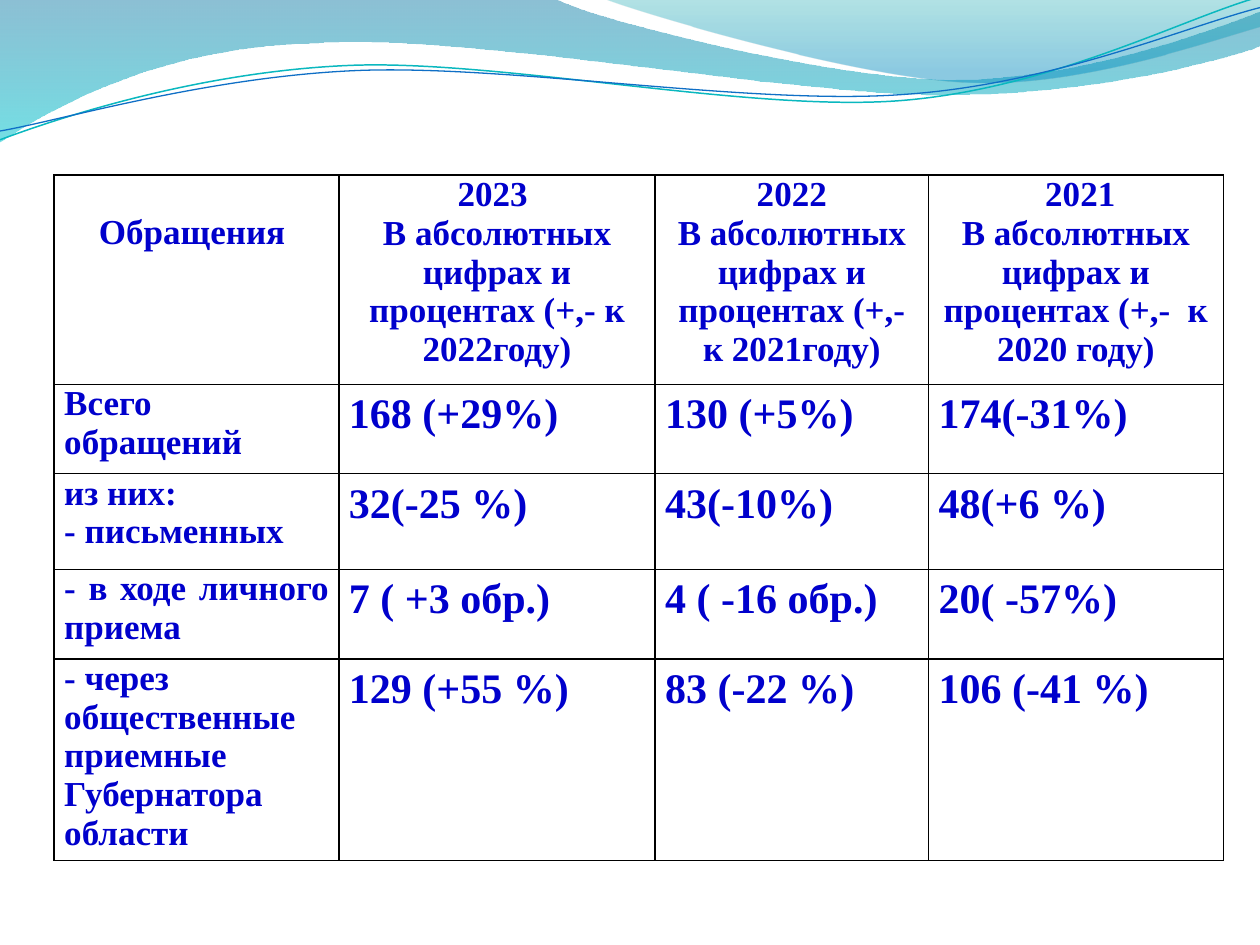
import math
import pptx
import pptx.util
import pptx.dml.color
import pptx.enum.text
import pptx.oxml
import pptx.oxml.ns

FONT, INK, EDGE = "Times New Roman", "0000CC", "000000"
HEAD = "В абсолютных цифрах и процентах "
ROWS = [
    [["Обращения "], [" 2023  ", HEAD + "(+,- к 2022году)"],
     [" 2022 ", HEAD + "(+,- к 2021году)"], [" 2021", HEAD + "(+,-  к 2020 году)"]],
    [["Всего обращений"], ["168 (+29%)"], ["130 (+5%)"], ["174(-31%)"]],
    [["из них:", "- письменных"], ["32(-25 %)"], ["43(-10%)"], ["48(+6 %)"]],
    [["- в ходе личного приема"], ["7 ( +3 обр.)"], ["4 ( -16 обр.)"], ["20( -57%)"]],
    [["- через общественные приемные Губернатора области"],
     ["129 (+55 %)"], ["83 (-22 %)"], ["106 (-41 %)"]],
]
WIDTHS = [2.26, 2.51, 2.17, 2.34]
HEIGHTS = [1.66, 0.71, 0.76, 0.71, 1.6]
JUST = (2, 3)
TURN = 357.3

BANDS = [
    ((-0.01, -0.01, 10.02, 1.14),
     [(0, 0), (4.4, -0.01),
      (4.76, 0.17, 6.64, 0.63, 7.58, 0.63), (8.53, 0.63, 9.58, 0.26, 10, 0.09),
      (10.01, 0.36),
      (9.83, 0.44, 8.7, 0.76, 7.46, 0.75), (6.22, 0.75, 3.82, 0.28, 2.57, 0.34),
      (1.29, 0.36, 0.46, 0.83, -0.01, 1.13), (0, 0)],
     [(0, "0074A1", 45), (1, "00C6CF", 55)]),
    ((4.79, -0.01, 5.21, 0.7),
     [(4.79, -0.01), (5.09, 0.11, 6.82, 0.62, 7.69, 0.65),
      (8.56, 0.69, 9.61, 0.32, 10, 0.21), (10, 0), (4.79, -0.01)],
     [(0, "00A1A9", 30), (0.8, "008BBF", 45)]),
]
WAVES = [
    ((-0.02, 0.22, 10.02, 0.71),
     [(0, 1.11), (0.48, 0.93, 1.58, 0.57, 2.77, 0.52),
      (3.95, 0.47, 5.93, 0.89, 7.13, 0.8), (8.33, 0.71, 9.38, 0.15, 9.98, -0.02)],
     "0AB8BF", 0.85),
    ((-0.02, 0.3, 10.03, 0.58),
     [(0, 1.04), (0.47, 0.96, 1.64, 0.61, 2.83, 0.56),
      (4.03, 0.51, 5.97, 0.84, 7.17, 0.75), (8.36, 0.67, 9.41, 0.21, 10, 0.06)],
     "0F6FC6", 0.75),
]

inch, pt = pptx.util.Inches, pptx.util.Pt
ALIGN = pptx.enum.text.PP_ALIGN
NS = pptx.oxml.ns.nsdecls("a")


def rgb(code):
    """Turn a hex string into a colour."""
    return pptx.dml.color.RGBColor.from_string(code)


def local(box, x, y, turn):
    """Give a point inside a box, before the box is turned."""
    left, top, wide, high = box
    dx, dy = x - left - wide / 2, y - top - high / 2
    cos, sin = math.cos(math.radians(turn)), math.sin(math.radians(turn))
    return inch(dx * cos + dy * sin + wide / 2), inch(dy * cos - dx * sin + high / 2)


def draw(slide, box, steps, close, turn=0):
    """Draw a freeform of lines and cubic curves in a box."""
    ends = [(inch(s[-2]), inch(s[-1])) for s in steps]
    pen = slide.shapes.build_freeform(*ends[0], scale=1.0)
    pen.add_line_segments(ends[1:], close=close)
    shape = pen.convert_to_shape()
    shape.left, shape.top, shape.width, shape.height = map(inch, box)
    shape.rotation = turn
    shape.shadow.inherit = False
    route = next(shape.element.spPr.iter(pptx.oxml.ns.qn("a:path")))
    route.set("w", str(shape.width))
    route.set("h", str(shape.height))
    for part in list(route):
        route.remove(part)
    for i, step in enumerate(steps):
        tag = "moveTo" if i == 0 else "lnTo" if len(step) == 2 else "cubicBezTo"
        spots = [local(box, x, y, turn) for x, y in zip(step[::2], step[1::2])]
        dots = "".join(f'<a:pt x="{x}" y="{y}"/>' for x, y in spots)
        route.append(pptx.oxml.parse_xml(f"<a:{tag} {NS}>{dots}</a:{tag}>"))
    if close:
        route.append(pptx.oxml.parse_xml(f"<a:close {NS}/>"))
    return shape


def add_band(slide, box, steps, stops):
    """Add a band with a see-through vertical gradient."""
    shape = draw(slide, box, steps, True)
    shape.line.fill.background()
    shape.fill.gradient()
    shape.fill.gradient_angle = 270
    for stop, (place, code, _) in zip(shape.fill.gradient_stops, stops):
        stop.position = place
        stop.color.rgb = rgb(code)
    tints = shape.element.spPr.iter(pptx.oxml.ns.qn("a:srgbClr"))
    for tint, (_, _, share) in zip(list(tints), stops):
        tint.append(pptx.oxml.parse_xml(f'<a:alpha {NS} val="{share * 1000}"/>'))


def add_wave(slide, box, steps, code, width):
    """Add a thin wavy line."""
    shape = draw(slide, box, steps, False, TURN)
    shape.fill.background()
    shape.line.color.rgb = rgb(code)
    shape.line.width = pt(width)


def frame(cell):
    """Rule all four sides of a cell."""
    props = cell._tc.get_or_add_tcPr()
    for spot, side in enumerate(("lnL", "lnR", "lnT", "lnB")):
        props.insert(spot, pptx.oxml.parse_xml(
            f'<a:{side} {NS} w="12700"><a:solidFill>'
            f'<a:srgbClr val="{EDGE}"/></a:solidFill></a:{side}>'))


def fill_cell(cell, texts, row, col):
    """Write and format one table cell."""
    value = row > 0 and col > 0
    cell.margin_left = cell.margin_right = inch(0.08)
    cell.margin_top = inch(0.3 if row == col == 0 else 0)
    cell.margin_bottom = 0
    cell.fill.background()
    frame(cell)
    for i, text in enumerate(texts):
        para = cell.text_frame.add_paragraph() if i else cell.text_frame.paragraphs[0]
        if row == 0:
            para.alignment = ALIGN.CENTER
        elif col == 0 and row in JUST:
            para.alignment = ALIGN.JUSTIFY
        if value:
            para.line_spacing = 1.15
        run = para.add_run()
        run.text = text
        run.font.name, run.font.bold = FONT, True
        run.font.size = pt(24 if value else 20)
        run.font.color.rgb = rgb(INK)


def add_grid(slide):
    """Add the table of appeals."""
    table = slide.shapes.add_table(
        len(ROWS), len(WIDTHS), inch(0.43), inch(1.39),
        inch(sum(WIDTHS)), inch(sum(HEIGHTS))).table
    table.first_row = table.horz_banding = False
    for col, width in zip(table.columns, WIDTHS):
        col.width = inch(width)
    for r, (cells, height) in enumerate(zip(ROWS, HEIGHTS)):
        table.rows[r].height = inch(height)
        for c, texts in enumerate(cells):
            fill_cell(table.cell(r, c), texts, r, c)


def main():
    """Build and save the slide."""
    deck = pptx.Presentation()
    deck.slide_width, deck.slide_height = inch(10), inch(7.5)
    slide = deck.slides.add_slide(deck.slide_layouts[6])
    for band in BANDS:
        add_band(slide, *band)
    for wave in WAVES:
        add_wave(slide, *wave)
    add_grid(slide)
    deck.save("out.pptx")


if __name__ == "__main__":
    main()
